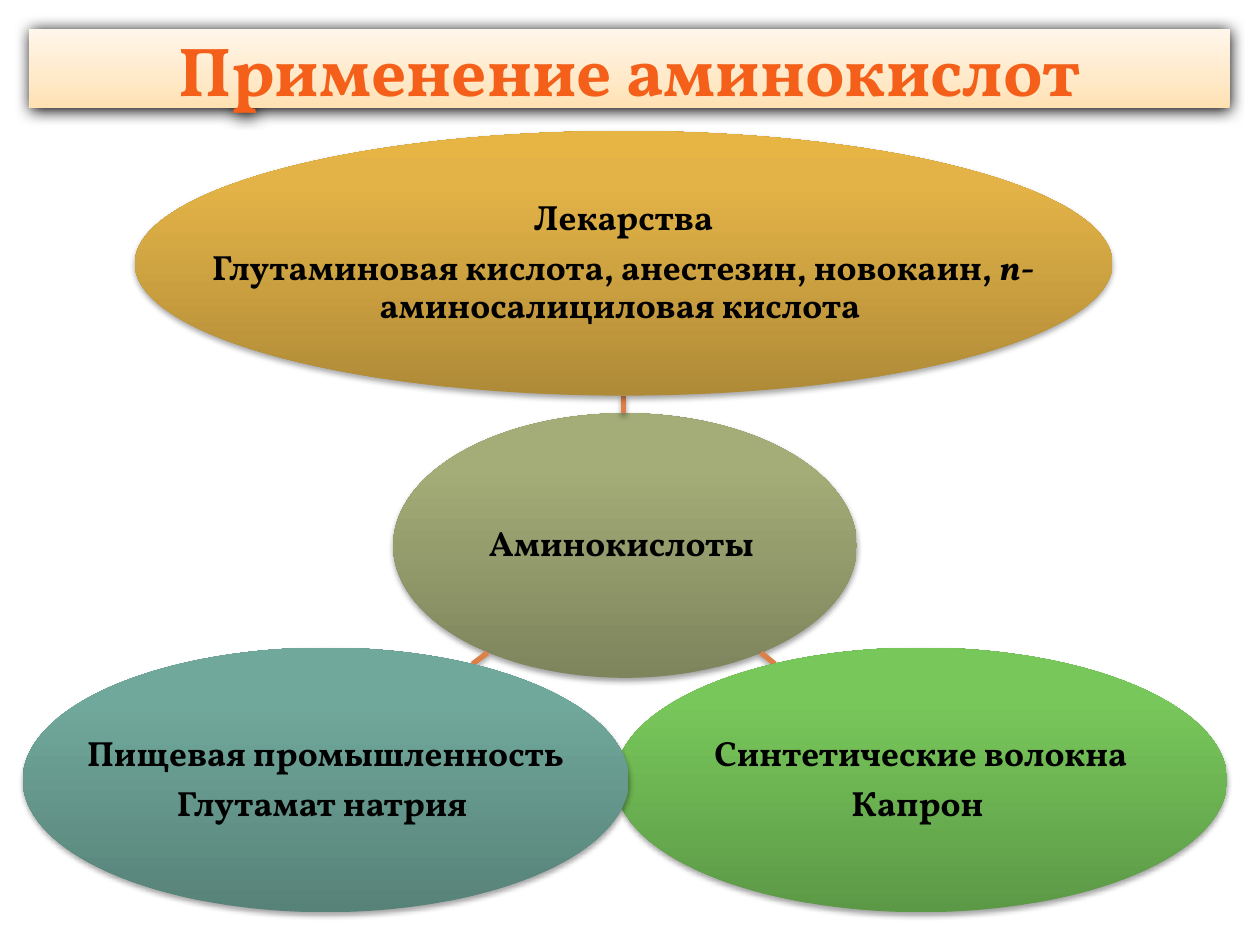
from copy import deepcopy
from dataclasses import dataclass

from lxml import etree
from pptx import Presentation
from pptx import util as u
from pptx.dml.color import RGBColor
from pptx.enum import shapes, text
from pptx.oxml.ns import qn


@dataclass(frozen=True)
class Theme:
    """Colours, gradients and type sizes of the slide."""
    font: str = "Vollkorn"
    head: float = 39.6
    body: float = 20
    ink: str = "000000"
    title: str = "F46019"
    link: str = "DD8047"
    cream: tuple = ((0, "FFE1B2"), (35, "FFE9C8"), (100, "FFF6EA"))
    olive: tuple = ((0, "7E845C"), (80, "A4AC77"), (100, "A6AE76"))
    gold: tuple = ((0, "AF8A37"), (80, "E3B347"), (100, "E7B544"))
    green: tuple = ((0, "5C9946"), (80, "78C75B"), (100, "77CA59"))
    teal: tuple = ((0, "578278"), (80, "71A89C"), (100, "70AA9D"))


T = Theme()
TALL = 2.1
MID = 4.95


def shade(effects, blur=3.1, dist=1.8, alpha=35):
    """Cast a black shadow straight down."""
    cast = etree.SubElement(effects, qn("a:outerShdw"), blurRad=str(u.Pt(blur)),
                            dist=str(u.Pt(dist)), dir="5400000", rotWithShape="0")
    tint = etree.SubElement(cast, qn("a:srgbClr"), val="000000")
    etree.SubElement(tint, qn("a:alpha"), val=str(alpha * 1000))


def form(slide, kind, box, stops, **cast):
    """Add a borderless shape with an upward gradient and a shadow."""
    shape = slide.shapes.add_shape(kind, *map(u.Inches, box))
    shape.line.fill.background()
    fill = shape.fill
    fill.gradient()
    fill.gradient_angle = 90
    ramp = shape._element.spPr.find(".//" + qn("a:gsLst"))
    ramp.append(deepcopy(ramp[-1]))
    for stop, (place, tone) in zip(fill.gradient_stops, stops):
        stop.position = place / 100
        stop.color.rgb = RGBColor.from_string(tone)
    shape.shadow.inherit = False
    shade(shape._element.spPr.find(qn("a:effectLst")), **cast)
    return shape


def write(para, parts, size, tone):
    """Add centred bold runs, each a (words, italic) pair."""
    para.alignment = text.PP_ALIGN.CENTER
    for words, slant in parts:
        run = para.add_run()
        run.text = words
        font = run.font
        font.name, font.size = T.font, u.Pt(size)
        font.bold, font.italic = True, slant
        font.color.rgb = RGBColor.from_string(tone)


def banner(slide, words):
    """Add the title bar."""
    bar = form(slide, shapes.MSO_SHAPE.RECTANGLE, (0.23, 0.23, 9.53, 0.63),
               T.cream, blur=8.5, dist=1, alpha=100)
    frame = bar.text_frame
    frame.word_wrap = True
    frame.vertical_anchor = text.MSO_ANCHOR.MIDDLE
    write(frame.paragraphs[0], [(words, False)], T.head, T.title)


def node(slide, left, top, width, stops, lines):
    """Add an ellipse with its label over the full width."""
    box = (left, top, width, TALL)
    form(slide, shapes.MSO_SHAPE.OVAL, box, stops)
    frame = slide.shapes.add_textbox(*map(u.Inches, box)).text_frame
    frame.word_wrap = True
    frame.vertical_anchor = text.MSO_ANCHOR.MIDDLE
    frame.margin_left = frame.margin_right = u.Inches(0.01)
    frame.margin_top = frame.margin_bottom = u.Inches(0.01)
    for i, parts in enumerate(lines):
        para = frame.add_paragraph() if i else frame.paragraphs[0]
        para.line_spacing = 0.9
        para.space_after = u.Pt(7)
        write(para, parts, T.body, T.ink)


def link(slide, *ends):
    """Add a straight line between two points."""
    line = slide.shapes.add_connector(shapes.MSO_CONNECTOR.STRAIGHT,
                                      *map(u.Inches, ends))
    line.line.color.rgb = RGBColor.from_string(T.link)
    line.line.width = u.Pt(3)
    shade(etree.SubElement(line._element.spPr, qn("a:effectLst")))


def main():
    """Build and save the slide."""
    deck = Presentation()
    deck.slide_width, deck.slide_height = u.Inches(10), u.Inches(7.5)
    slide = deck.slides.add_slide(deck.slide_layouts[6])
    banner(slide, "Применение аминокислот")
    node(slide, 3.12, 3.28, 3.68, T.olive, [[("Аминокислоты ", False)]])
    link(slide, MID, 3.28, MID, 3.14)
    node(slide, 1.07, 1.04, 7.76, T.gold, [
        [("Лекарства", False)],
        [("Глутаминовая кислота, анестезин, новокаин, ", False),
         ("п", True), ("-аминосалициловая кислота ", False)]])
    link(slide, 6.04, 5.18, 6.15, 5.27)
    node(slide, 4.88, 5.14, 4.86, T.green, [
        [("Синтетические волокна", False)], [("Капрон ", False)]])
    link(slide, 3.87, 5.18, 3.75, 5.27)
    node(slide, 0.18, 5.14, 4.81, T.teal, [
        [("Пищевая промышленность", False)], [("Глутамат натрия ", False)]])
    deck.save("out.pptx")


if __name__ == "__main__":
    main()
